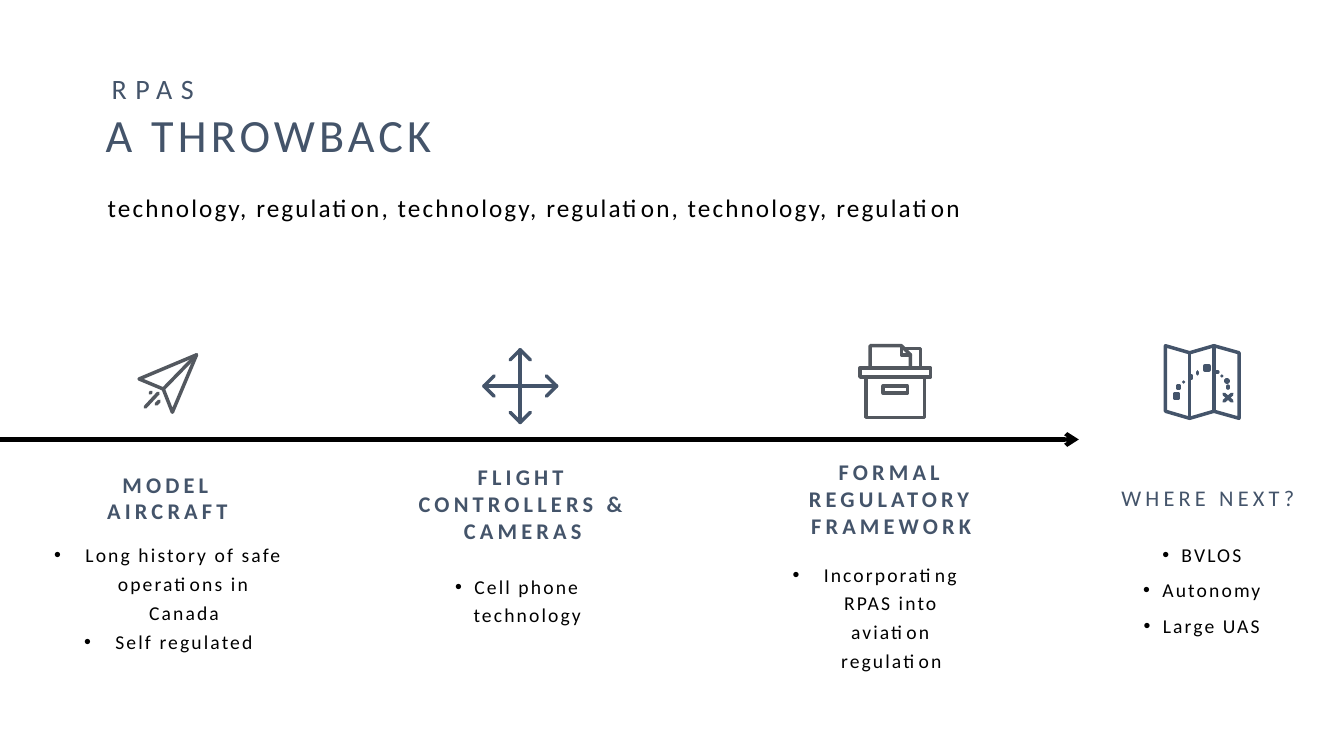
from collections import namedtuple

from lxml import etree
from pptx import Presentation
from pptx.dml.color import RGBColor
from pptx.enum.shapes import MSO_CONNECTOR
from pptx.enum.text import PP_ALIGN
from pptx.oxml.ns import qn
from pptx.util import Inches, Pt

LEFT, CENTER = PP_ALIGN.LEFT, PP_ALIGN.CENTER
STRAIGHT = MSO_CONNECTOR.STRAIGHT
BLACK = RGBColor(0x00, 0x00, 0x00)
SLATE = RGBColor(0x44, 0x54, 0x6A)
GRAY = RGBColor(0x53, 0x58, 0x5F)
FONT = "Calibri"
CELL = Inches(0.1)
ICON_UNIT = Inches(0.01)

Box = namedtuple("Box", "left top width height")
Icon = namedtuple("Icon", "left top color strokes")
Stage = namedtuple("Stage", "box title title_box bullets indent spacing icon")


def rectangle(left, top, right, bottom):
    return [(left, top), (right, top), (right, bottom), (left, bottom), (left, top)]


def dot(x, y, radius=1):
    return rectangle(x - radius, y - radius, x + radius, y + radius)


def four_arrows(center=38, reach=36):
    strokes = []
    for x, y in ((0, -1), (1, 0), (0, 1), (-1, 0)):
        tip = (center + reach * x, center + reach * y)
        barbs = [(tip[0] - 10 * x + side * 10 * y, tip[1] - 10 * y + side * 10 * x)
                 for side in (-1, 1)]
        strokes += [[(center, center), tip], [barbs[0], tip, barbs[1]]]
    return strokes


PLANE = [
    [(2, 26), (59, 2), (35, 59), (26, 36), (2, 26)],
    [(26, 36), (59, 2)],
    [(21, 40), (8, 54)],
    [(22, 48), (19, 51)],
    [(14, 39), (13, 40)],
]
ARCHIVE = [
    rectangle(2, 24, 72, 33),
    [(8, 33), (8, 73), (66, 73), (66, 33)],
    rectangle(25, 42, 49, 49),
    [(12, 23), (12, 2), (43, 2), (52, 11), (52, 23)],
    [(43, 2), (43, 11), (52, 11)],
    [(46, 5), (62, 5), (62, 23)],
]
MAP = [
    [(2, 2), (26, 9), (50, 2), (75, 9), (75, 74), (50, 67), (26, 74), (2, 67), (2, 2)],
    [(26, 9), (26, 74)],
    [(50, 2), (50, 67)],
    dot(13, 52, 2),
    dot(43, 24, 2),
    [(60, 50), (68, 57)],
    [(68, 50), (60, 57)],
] + [dot(x, y, 0.5) for x, y in
     ((15, 43), (20, 38), (27, 33), (34, 29), (53, 28), (58, 32), (63, 37), (64, 43))]

STAGES = [
    Stage(Box(4.3, 52.9, 24.8, 12.8), "MODEL AIRCRAFT", Box(1.7, -6.7, 21.2, 6.4),
          ["Long history of safe operations in Canada", "Self regulated"],
          0.31, Pt(20.5), Icon(9.3, -17.9, GRAY, PLANE)),
    Stage(Box(40.5, 56, 21.7, 6.6), "FLIGHT CONTROLLERS & CAMERAS",
          Box(-1.7, -10.5, 26.1, 9.1), ["Cell phone technology"],
          0.19, Pt(20.5), Icon(7.3, -21.5, SLATE, four_arrows())),
    Stage(Box(75.4, 54.8, 22.9, 12.5), "FORMAL REGULATORY FRAMEWORK",
          Box(-1.5, -9.8, 29, 9.1), ["Incorporating RPAS into aviation regulation"],
          0.31, Pt(20.5), Icon(9.7, -20.7, GRAY, ARCHIVE)),
    Stage(Box(107.8, 52.2, 22.8, 15.1), "WHERE NEXT?", Box(0.9, -4.7, 22.2, 3.7),
          ["BVLOS", "Autonomy", "Large UAS"],
          0.19, 1.5, Icon(7.6, -18.1, SLATE, MAP)),
]


def cells(count):
    return round(count * CELL)


def inside(outer, inner):
    return Box(outer.left + inner.left, outer.top + inner.top, inner.width, inner.height)


def add_bullet(para, indent):
    properties = para._p.get_or_add_pPr()
    properties.set("marL", str(Inches(indent)))
    properties.set("indent", str(-Inches(indent)))
    font = etree.SubElement(properties, qn("a:buFont"))
    font.set("typeface", "Arial")
    etree.SubElement(properties, qn("a:buChar")).set("char", "•")


def add_text(page, box, lines, size, color=SLATE, bold=False, tracking=3,
             align=LEFT, spacing=None, indent=None, wrap=True):
    frame = page.shapes.add_textbox(*map(cells, box)).text_frame
    frame.word_wrap = wrap
    for index, line in enumerate(lines):
        para = frame.add_paragraph() if index else frame.paragraphs[0]
        para.alignment = align
        if spacing:
            para.line_spacing = spacing
        if indent:
            add_bullet(para, indent)
        span = para.add_run()
        span.text = line
        span.font.name = FONT
        span.font.size = Pt(size)
        span.font.bold = bold
        span.font.color.rgb = color
        span._r.get_or_add_rPr().set("spc", str(round(tracking * 100)))


def add_icon(page, left, top, color, strokes):
    builder = page.shapes.build_freeform(*strokes[0][0], scale=ICON_UNIT)
    for index, stroke in enumerate(strokes):
        if index:
            builder.move_to(*stroke[0])
        builder.add_line_segments(stroke[1:], close=False)
    shape = builder.convert_to_shape(cells(left), cells(top))
    shape.shadow.inherit = False
    shape.fill.background()
    shape.line.color.rgb = color
    shape.line.width = Pt(2.5)
    outline = shape.line._get_or_add_ln()
    outline.set("cap", "rnd")
    etree.SubElement(outline, qn("a:round"))


def add_header(page, box):
    add_text(page, inside(box, Box(0, 3.5, 84.3, 6.6)), ["A THROWBACK"], 33)
    add_text(page, inside(box, Box(0.6, 0, 34.3, 4.4)), ["RPAS"], 20, tracking=6)
    add_text(page, inside(box, Box(0.2, 10.5, 107, 4.9)),
             ["technology, regulation, technology, regulation, technology, regulation"],
             18, color=BLACK, tracking=1.5, spacing=1.5)


def add_timeline(page, box):
    right = box.left + box.width
    line = page.shapes.add_connector(
        STRAIGHT, cells(box.left), cells(box.top), cells(right), cells(box.top))
    line.line.color.rgb = BLACK
    line.line.width = Pt(3)
    etree.SubElement(line.line._get_or_add_ln(), qn("a:tailEnd")).set("type", "arrow")
    etree.SubElement(line._element.spPr, qn("a:effectLst"))


def add_stage(page, stage, last):
    add_text(page, inside(stage.box, stage.title_box), [stage.title], 16,
             bold=not last, align=CENTER, wrap=not last)
    add_text(page, stage.box, stage.bullets, 14, color=BLACK, tracking=1.5,
             align=CENTER, spacing=stage.spacing, indent=stage.indent)
    icon = stage.icon
    add_icon(page, stage.box.left + icon.left, stage.box.top + icon.top,
             icon.color, icon.strokes)


def main():
    deck = Presentation()
    deck.slide_width, deck.slide_height = Inches(13.33), Inches(7.5)
    page = deck.slides.add_slide(deck.slide_layouts[6])
    add_timeline(page, Box(-0.1, 43.6, 107.1, 0))
    add_header(page, Box(9.5, 6.6, 107.2, 15.4))
    for stage in STAGES:
        add_stage(page, stage, last=stage is STAGES[-1])
    deck.save("out.pptx")


if __name__ == "__main__":
    main()
